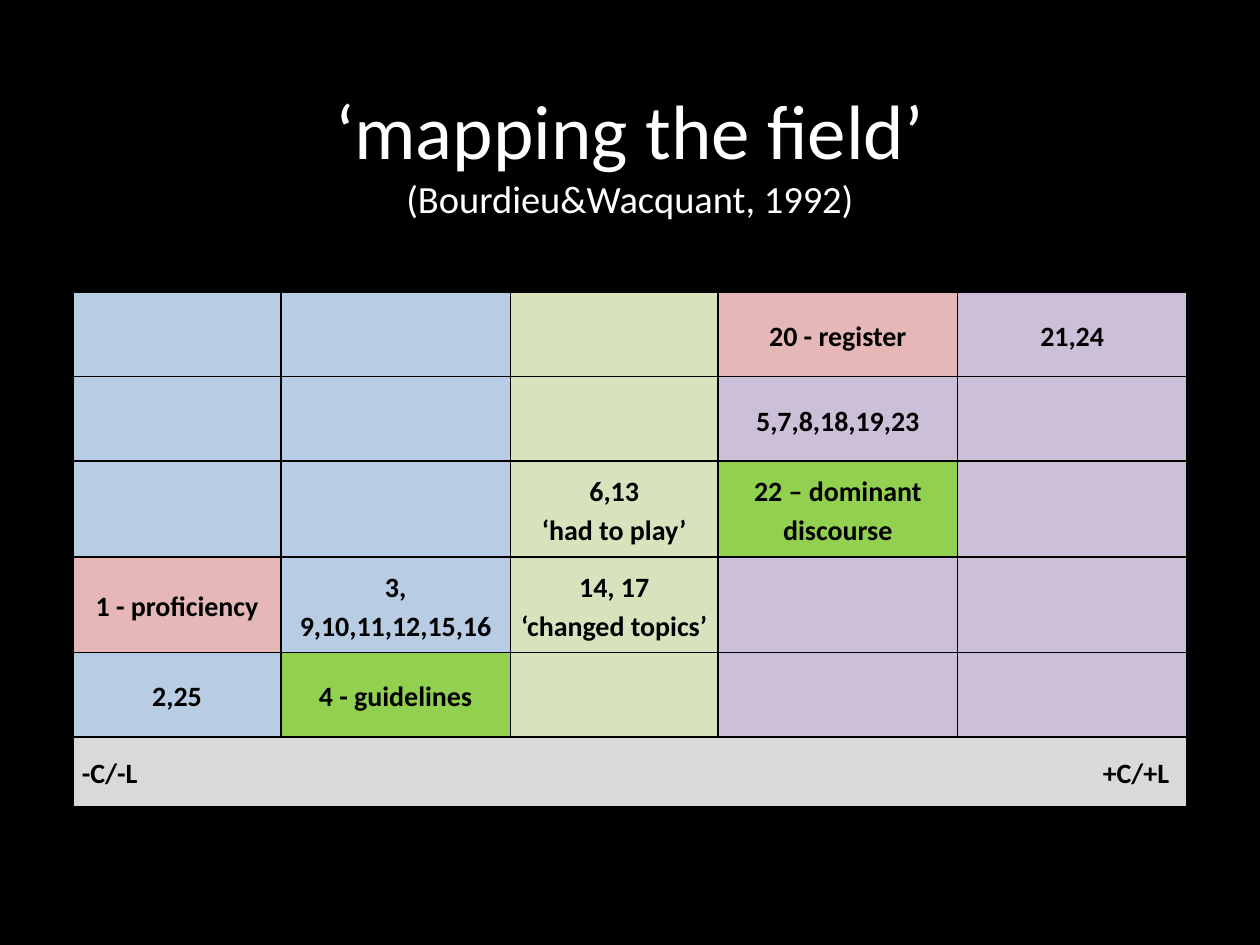
from lxml.etree import SubElement
from pptx import Presentation
from pptx.dml.color import RGBColor
from pptx.enum.text import MSO_ANCHOR, PP_ALIGN
from pptx.oxml.ns import qn
from pptx.util import Inches, Pt

BLACK = RGBColor(0x00, 0x00, 0x00)
WHITE = RGBColor(0xFF, 0xFF, 0xFF)
BLUE = RGBColor(0xB8, 0xCC, 0xE4)
OLIVE = RGBColor(0xD6, 0xE3, 0xBC)
PURPLE = RGBColor(0xCC, 0xC0, 0xD9)
PINK = RGBColor(0xE5, 0xB8, 0xB7)
GREEN = RGBColor(0x92, 0xD0, 0x50)
GREY = RGBColor(0xD9, 0xD9, 0xD9)
FONT = "Calibri"

# Content
TITLE = [("‘mapping the field’", 44), ("(Bourdieu&Wacquant, 1992)", 22)]
GRID = [
    ["", "", "", "20 - register", "21,24"],
    ["", "", "", "5,7,8,18,19,23", ""],
    ["", "", "6,13\n‘had to play’", "22 – dominant discourse", ""],
    ["1 - proficiency", "3, 9,10,11,12,15,16", "14, 17\n‘changed topics’", "", ""],
    ["2,25", "4 - guidelines", "", "", ""],
]
AXIS = "-C/-L\t+C/+L"
COLUMN_FILLS = [BLUE, BLUE, OLIVE, PURPLE, PURPLE]
SPECIAL_FILLS = {(0, 3): PINK, (3, 0): PINK, (2, 3): GREEN, (4, 1): GREEN}
COLUMN_WIDTHS = [1.65, 1.82, 1.65, 1.9, 1.82]
ROW_HEIGHTS = [0.67, 0.67, 0.76, 0.76, 0.67, 0.55]
AXIS_TAB = 8.63


def add_borders(cell):
    properties = cell._tc.get_or_add_tcPr()
    for side in ("a:lnL", "a:lnR", "a:lnT", "a:lnB"):
        line = SubElement(properties, qn(side), w=str(Pt(1)))
        fill = SubElement(line, qn("a:solidFill"))
        SubElement(fill, qn("a:srgbClr"), val=str(BLACK))


def add_right_tab(para, position):
    tabs = SubElement(para._p.get_or_add_pPr(), qn("a:tabLst"))
    SubElement(tabs, qn("a:tab"), pos=str(Inches(position)), algn="r")


def fill_cell(cell, text, color, align=PP_ALIGN.CENTER):
    add_borders(cell)
    cell.fill.solid()
    cell.fill.fore_color.rgb = color
    cell.vertical_anchor = MSO_ANCHOR.MIDDLE
    cell.margin_left = cell.margin_right = Inches(0.07)
    cell.margin_top = cell.margin_bottom = 0
    cell.text = text
    for para in cell.text_frame.paragraphs:
        if "\t" in text:
            add_right_tab(para, AXIS_TAB)
        para.alignment = align
        para.line_spacing = 1.15
        para.font.name = FONT
        para.font.size = Pt(16)
        para.font.bold = True
        para.font.color.rgb = BLACK


deck = Presentation()
deck.slide_width, deck.slide_height = Inches(10), Inches(7.5)
page = deck.slides.add_slide(deck.slide_layouts[6])
page.background.fill.solid()
page.background.fill.fore_color.rgb = BLACK

# Title
box = page.shapes.add_textbox(Inches(0.5), Inches(0.58), Inches(9), Inches(1.25))
frame = box.text_frame
frame.word_wrap = True
frame.vertical_anchor = MSO_ANCHOR.MIDDLE
para = frame.paragraphs[0]
para.alignment = PP_ALIGN.CENTER
for index, (text, size) in enumerate(TITLE):
    if index:
        para.add_line_break()
    span = para.add_run()
    span.text = text
    span.font.name = FONT
    span.font.size = Pt(size)
    span.font.color.rgb = WHITE

# Field map
table = page.shapes.add_table(
    len(ROW_HEIGHTS), len(COLUMN_WIDTHS), Inches(0.58), Inches(2.32),
    Inches(sum(COLUMN_WIDTHS)), Inches(sum(ROW_HEIGHTS))).table
for column, width in zip(table.columns, COLUMN_WIDTHS):
    column.width = Inches(width)
for row, height in zip(table.rows, ROW_HEIGHTS):
    row.height = Inches(height)
for r, texts in enumerate(GRID):
    for c, text in enumerate(texts):
        fill_cell(table.cell(r, c), text, SPECIAL_FILLS.get((r, c), COLUMN_FILLS[c]))

# Axis row across the whole table
last = len(GRID)
axis = table.cell(last, 0)
axis.merge(table.cell(last, len(COLUMN_WIDTHS) - 1))
fill_cell(axis, AXIS, GREY, PP_ALIGN.LEFT)

deck.save("out.pptx")
